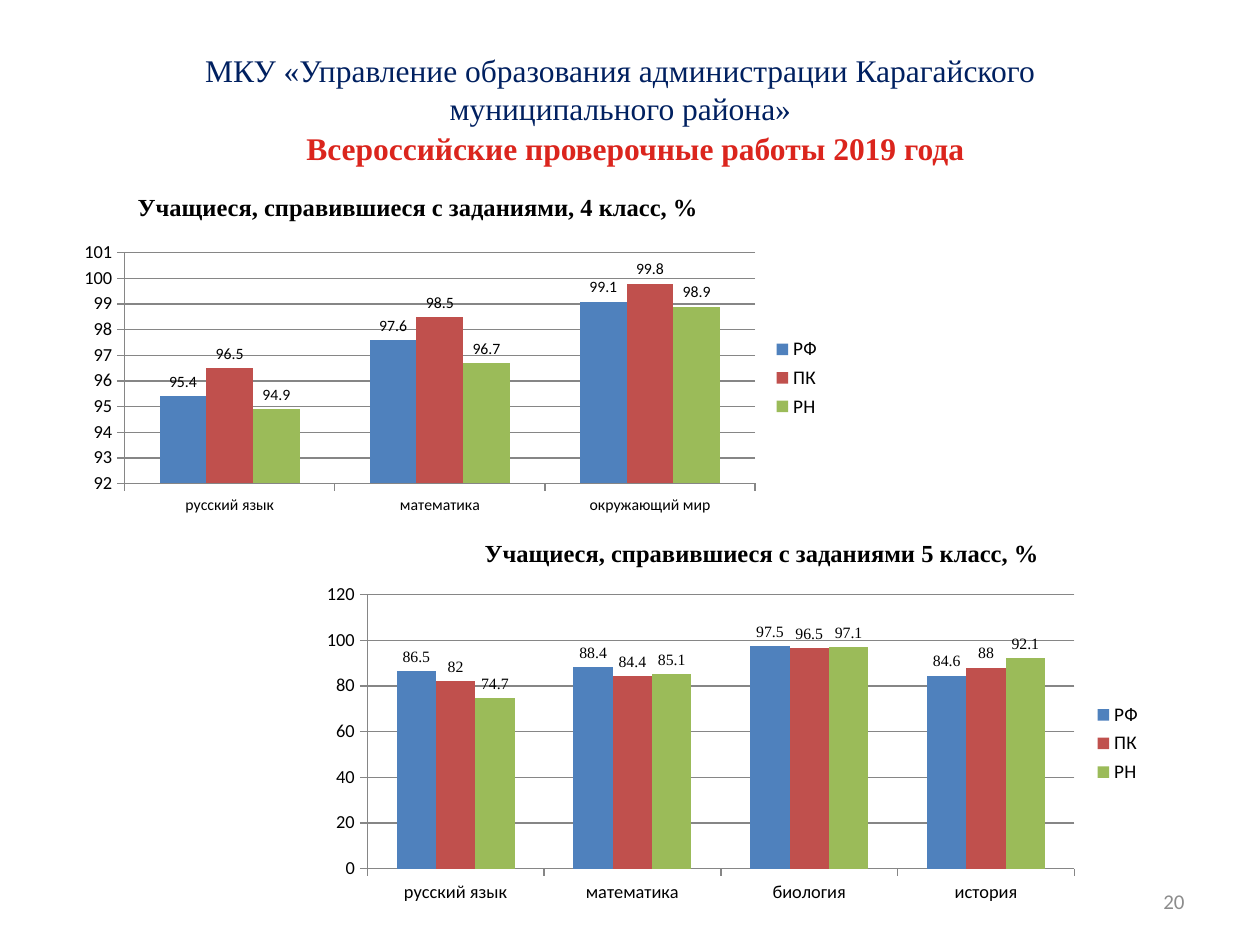
import pptx
import pptx.chart.data
import pptx.dml.color
import pptx.enum.chart
import pptx.enum.text
import pptx.util

RGBColor = pptx.dml.color.RGBColor
NAVY = RGBColor(0x00, 0x20, 0x60)
RED = RGBColor(0xDB, 0x25, 0x1D)
BLACK = RGBColor(0x00, 0x00, 0x00)
GRAY = RGBColor(0x8C, 0x8C, 0x8C)
AXIS_GRAY = RGBColor(0x86, 0x86, 0x86)
SERIES_COLORS = {
    "РФ": RGBColor(0x4F, 0x81, 0xBD),
    "ПК": RGBColor(0xC0, 0x50, 0x4D),
    "РН": RGBColor(0x9B, 0xBB, 0x59),
}
SERIF = "Times New Roman"
SANS = "Calibri"
PX_PER_INCH = 126
ALIGN = pptx.enum.text.PP_ALIGN
ANCHOR = pptx.enum.text.MSO_ANCHOR
CHART = pptx.enum.chart


def px(length):
    return pptx.util.Emu(round(length * 914400 / PX_PER_INCH))


def set_attributes(target, values):
    for name, value in values.items():
        setattr(target, name, value)


def format_font(font, size, color=BLACK, name=SANS, bold=False):
    set_attributes(font, {"size": pptx.util.Pt(size), "name": name, "bold": bold})
    font.color.rgb = color


def write_text(shape, box, text, size, color, name=SERIF, bold=False,
               alignment=ALIGN.CENTER, anchor=ANCHOR.TOP):
    set_attributes(shape, dict(zip(("left", "top", "width", "height"), map(px, box))))
    set_attributes(shape.text_frame, {
        "text": text,
        "word_wrap": True,
        "auto_size": pptx.enum.text.MSO_AUTO_SIZE.NONE,
        "vertical_anchor": anchor,
    })
    paragraph = shape.text_frame.paragraphs[0]
    paragraph.alignment = alignment
    format_font(paragraph.runs[0].font, size, color, name, bold)


def add_text(slide, box, *args, **formats):
    write_text(slide.shapes.add_textbox(0, 0, 0, 0), box, *args, **formats)


def add_header(slide, box):
    left, top, width, height = box
    add_text(slide, (left + 50, top, width - 130, 89),
             "МКУ «Управление образования администрации Карагайского муниципального района»",
             18, NAVY)
    write_text(slide.shapes.title, (left, top + 78, width, height - 78),
               "Всероссийские проверочные работы 2019 года", 18, RED, bold=True)


def format_axes(chart, category_size, scale):
    for axis, size in ((chart.category_axis, category_size), (chart.value_axis, 10.5)):
        axis.major_tick_mark = CHART.XL_TICK_MARK.OUTSIDE
        format_font(axis.tick_labels.font, size)
        axis.format.line.color.rgb = AXIS_GRAY
    set_attributes(chart.value_axis, scale)
    chart.value_axis.major_gridlines.format.line.color.rgb = AXIS_GRAY


def format_series(plot, label_font):
    set_attributes(plot, {"gap_width": 150, "vary_by_categories": False})
    for series in plot.series:
        series.format.fill.solid()
        series.format.fill.fore_color.rgb = SERIES_COLORS[series.name]
        labels = series.data_labels
        set_attributes(labels, {
            "show_value": True,
            "position": CHART.XL_LABEL_POSITION.OUTSIDE_END,
        })
        format_font(labels.font, 9, name=label_font)


def add_grade_section(slide, box, heading, heading_box, chart_offset, categories,
                      values, scale, category_size, label_font):
    left, top, width, height = box
    heading_left, heading_width = heading_box
    add_text(slide, (left + heading_left, top, heading_width, 43),
             heading, 14, BLACK, bold=True)
    data = pptx.chart.data.CategoryChartData()
    data.categories = categories
    for name, row in zip(SERIES_COLORS, values):
        data.add_series(name, row)
    offset_x, offset_y = chart_offset
    frame = (left + offset_x, top + offset_y, width - offset_x, height - offset_y)
    chart = slide.shapes.add_chart(
        CHART.XL_CHART_TYPE.COLUMN_CLUSTERED, *map(px, frame), data).chart
    set_attributes(chart, {"has_title": False, "has_legend": True})
    format_font(chart.font, 18)
    set_attributes(chart.legend, {
        "position": CHART.XL_LEGEND_POSITION.RIGHT, "include_in_layout": False})
    format_font(chart.legend.font, 11)
    format_axes(chart, category_size, scale)
    format_series(chart.plots[0], label_font)


def add_page_number(slide, box):
    add_text(slide, box, "20", 12, GRAY, name=SANS,
             alignment=ALIGN.RIGHT, anchor=ANCHOR.MIDDLE)


def main():
    presentation = pptx.Presentation()
    set_attributes(presentation, {"slide_width": px(1260), "slide_height": px(945)})
    slide = presentation.slides.add_slide(presentation.slide_layouts[5])
    add_header(slide, (84, 45, 1103, 128))
    add_grade_section(
        slide, (48, 186, 786, 334),
        "Учащиеся, справившиеся с заданиями, 4 класс, %", (0, 740), (21, 50),
        ["русский язык", "математика", "окружающий мир"],
        [(95.4, 97.6, 99.1), (96.5, 98.5, 99.8), (94.9, 96.7, 98.9)],
        {"minimum_scale": 92, "maximum_scale": 101, "major_unit": 1}, 9, SANS)
    add_grade_section(
        slide, (310, 532, 845, 378),
        "Учащиеся, справившиеся с заданиями 5 класс, %", (107, 690), (0, 45),
        ["русский язык", "математика", "биология", "история"],
        [(86.5, 88.4, 97.5, 84.6), (82, 84.4, 96.5, 88), (74.7, 85.1, 97.1, 92.1)],
        {"minimum_scale": 0, "maximum_scale": 120, "major_unit": 20}, 10.5, SERIF)
    add_page_number(slide, (903, 876, 294, 50))
    presentation.save("out.pptx")


if __name__ == "__main__":
    main()
